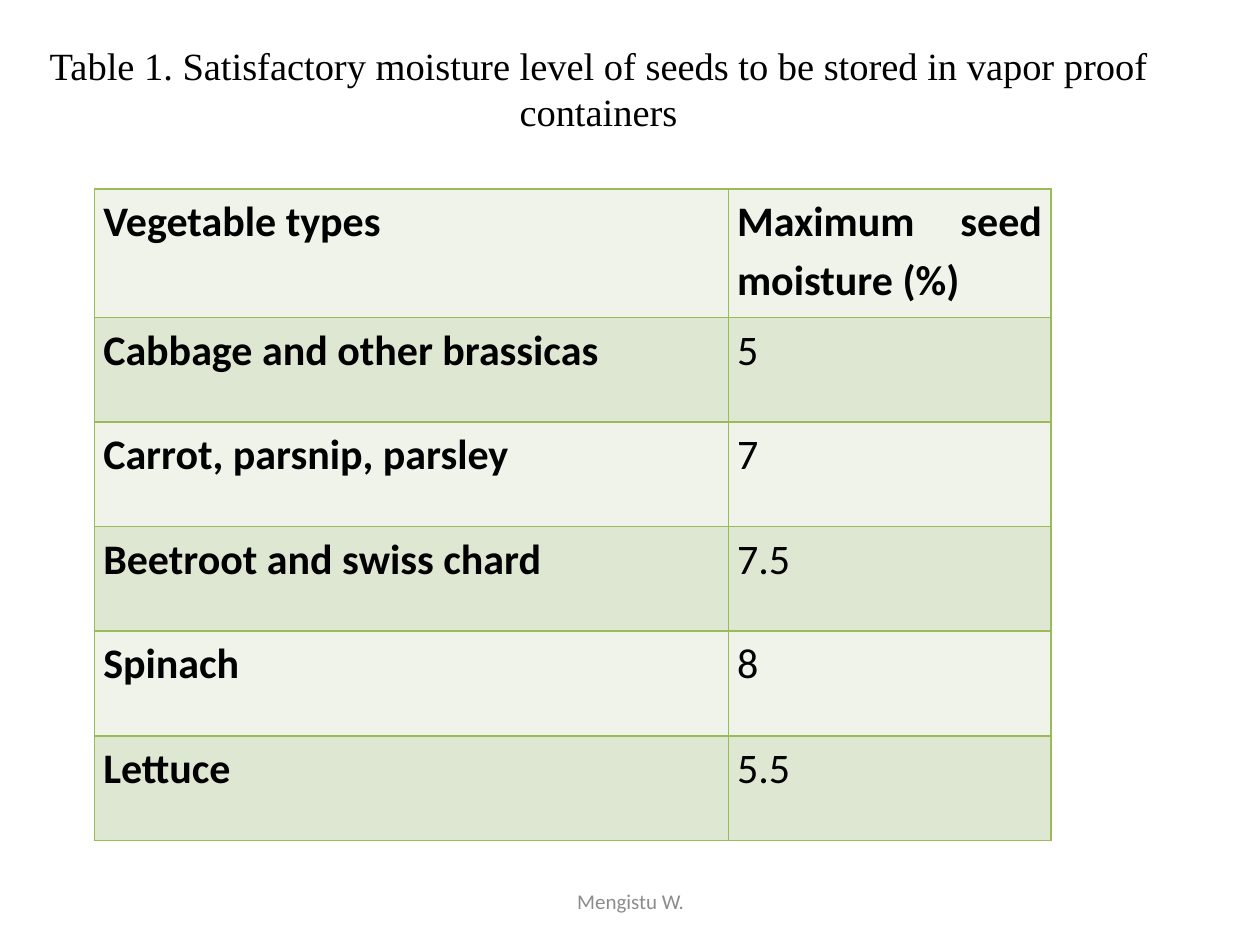
from dataclasses import dataclass

from lxml import etree
from pptx import Presentation
from pptx.dml.color import RGBColor
from pptx.enum.text import MSO_ANCHOR, PP_ALIGN
from pptx.oxml.ns import qn
from pptx.util import Inches, Pt

CENTER, JUSTIFY = PP_ALIGN.CENTER, PP_ALIGN.JUSTIFY
MIDDLE = MSO_ANCHOR.MIDDLE


@dataclass(frozen=True)
class Theme:
    ink: str = "000000"
    muted: str = "8C8C8C"
    border: str = "9BBB59"
    bands: tuple = ("EFF3EA", "DEE7D1")
    title_font: str = "Times New Roman"
    body_font: str = "Calibri"
    title_size: int = 22
    body_size: int = 24
    footer_size: int = 12


def write(frame, text, font, size, color, align, bold=False):
    paragraph = frame.paragraphs[0]
    paragraph.alignment = align
    run = paragraph.add_run()
    run.text = text
    run.font.name = font
    run.font.size = Pt(size)
    run.font.bold = bold
    run.font.color.rgb = RGBColor.from_string(color)
    return paragraph


def add_borders(cell, color):
    properties = cell._tc.get_or_add_tcPr()
    for index, side in enumerate(("a:lnL", "a:lnR", "a:lnT", "a:lnB")):
        line = etree.Element(qn(side), w=str(Pt(1)))
        fill = etree.SubElement(line, qn("a:solidFill"))
        etree.SubElement(fill, qn("a:srgbClr"), val=color)
        properties.insert(index, line)


theme = Theme()
deck = Presentation()
deck.slide_width, deck.slide_height = Inches(10), Inches(7.5)
W, H = deck.slide_width, deck.slide_height
slide = deck.slides.add_slide(deck.slide_layouts[5])

title = slide.shapes.title
title.left, title.top = int(W / 40), int(H / 30)
title.width, title.height = int(W * 0.9), int(H / 6)
title.text_frame.word_wrap = True
title.text_frame.vertical_anchor = MIDDLE
title.text_frame.margin_bottom = Inches(0.4)
write(title.text_frame,
      "Table 1. Satisfactory moisture level of seeds to be stored in vapor proof containers",
      theme.title_font, theme.title_size, theme.ink, CENTER)

moisture_rows = [
    ("Vegetable types", "Maximum seed moisture (%)"),
    ("Cabbage and other brassicas", "5"),
    ("Carrot, parsnip, parsley", "7"),
    ("Beetroot and swiss chard", "7.5"),
    ("Spinach", "8"),
    ("Lettuce", "5.5"),
]
column_widths = (Inches(5.03), Inches(2.56))
header_height, row_height = Inches(1.02), Inches(0.83)
table_height = header_height + row_height * (len(moisture_rows) - 1)
moisture = slide.shapes.add_table(
    len(moisture_rows), len(column_widths),
    int(W * 0.075), int(H * 0.2), sum(column_widths), table_height).table

for column, width in zip(moisture.columns, column_widths):
    column.width = width
for r, values in enumerate(moisture_rows):
    moisture.rows[r].height = row_height if r else header_height
    for c, value in enumerate(values):
        cell = moisture.cell(r, c)
        cell.margin_left = cell.margin_right = Inches(0.07)
        cell.margin_top = cell.margin_bottom = 0
        cell.fill.solid()
        cell.fill.fore_color.rgb = RGBColor.from_string(theme.bands[r % 2])
        add_borders(cell, theme.border)
        entry = write(cell.text_frame, value, theme.body_font, theme.body_size,
                      theme.ink, JUSTIFY, bold=r == 0 or c == 0)
        entry.line_spacing = 1.15

footer = slide.shapes.add_textbox(
    Inches(3.42), Inches(6.95), Inches(3.17), Inches(0.4)).text_frame
footer.word_wrap = True
footer.vertical_anchor = MIDDLE
write(footer, "Mengistu W.", theme.body_font, theme.footer_size, theme.muted, CENTER)

deck.save("out.pptx")
